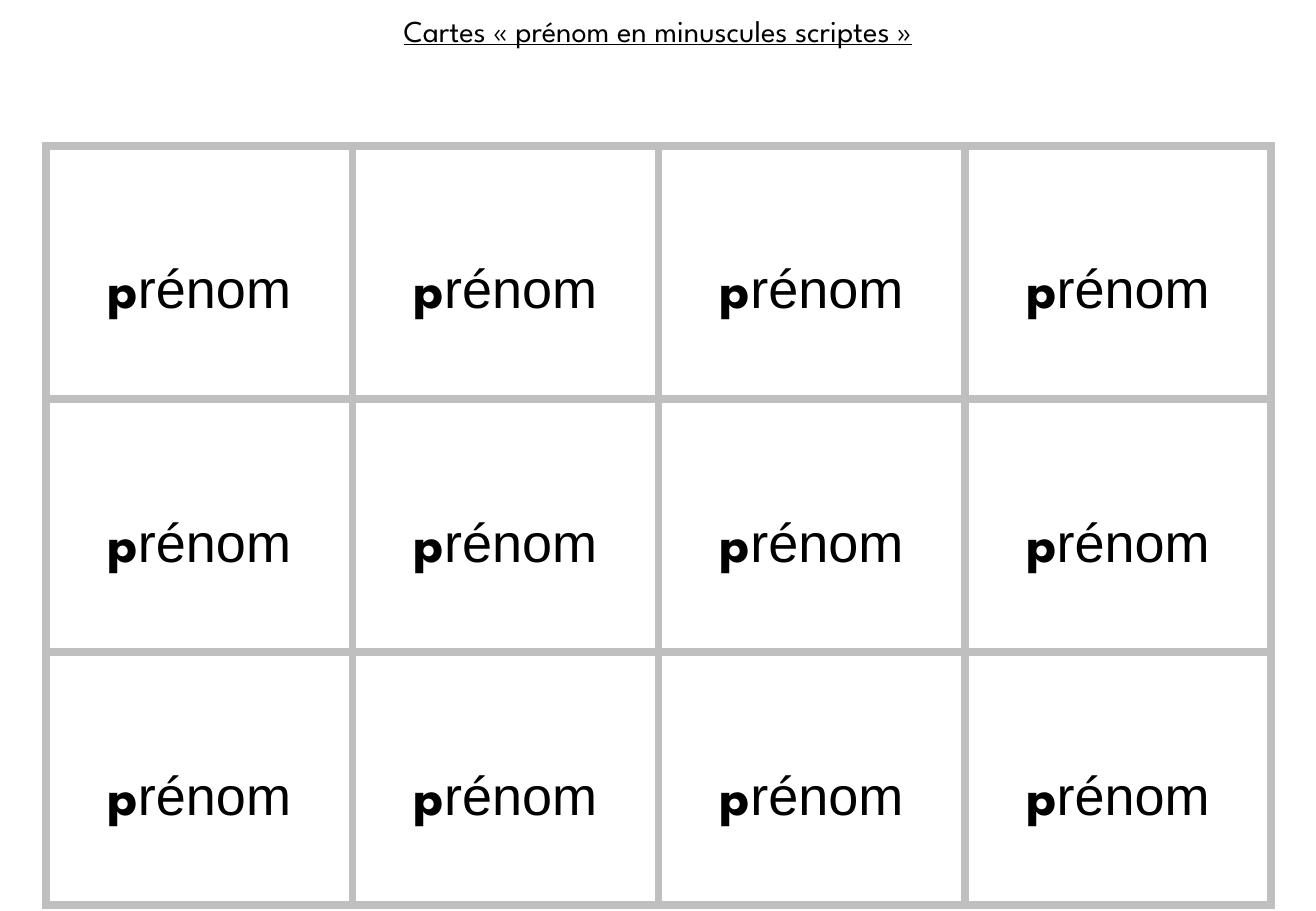
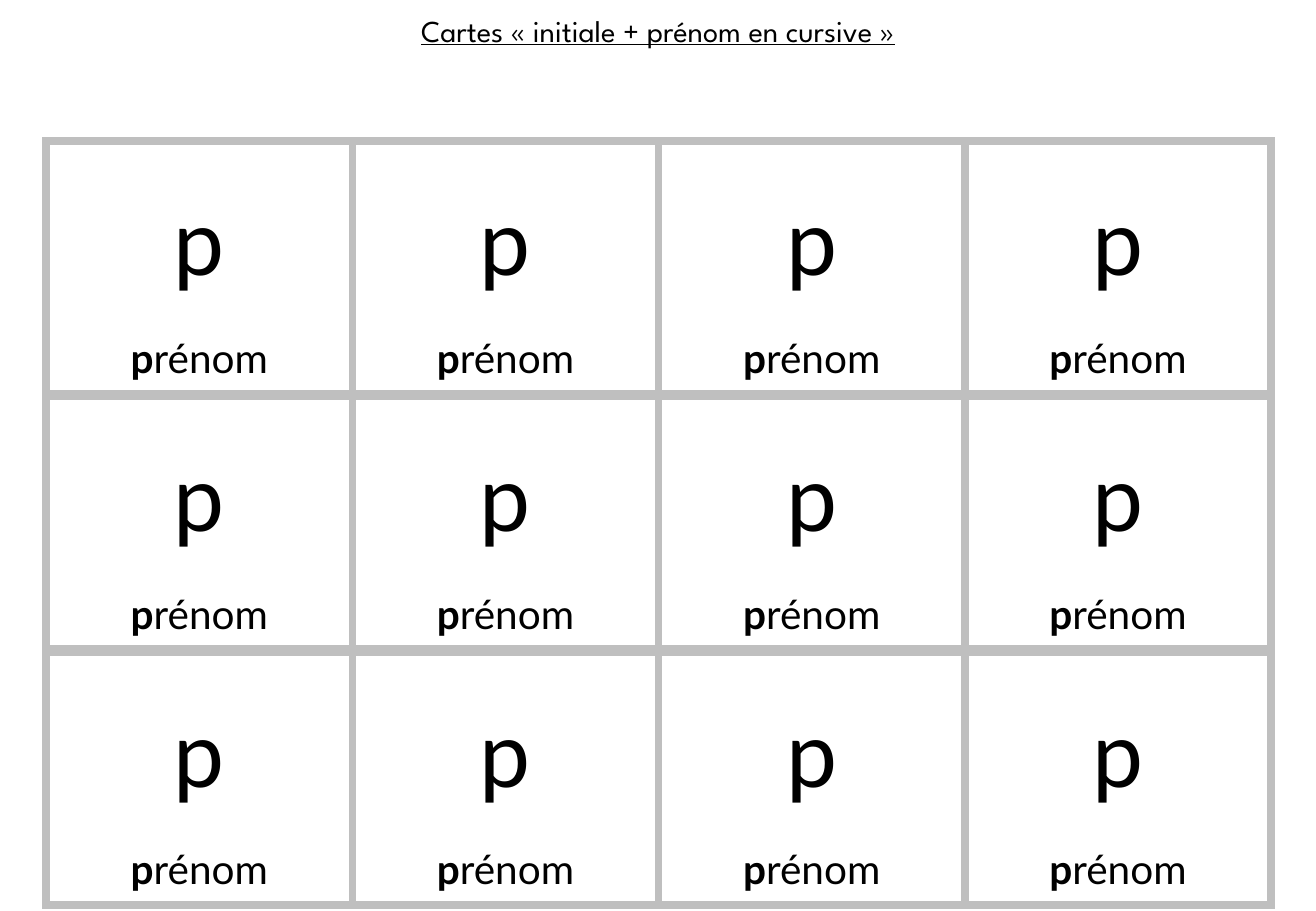
from dataclasses import dataclass
from itertools import product

from lxml.etree import SubElement
from pptx import Presentation
from pptx.dml.color import RGBColor
from pptx.enum.shapes import MSO_SHAPE
from pptx.enum.text import MSO_AUTO_SIZE, PP_ALIGN
from pptx.oxml.ns import qn
from pptx.util import Inches, Pt


@dataclass(frozen=True)
class Theme:
    ink: RGBColor = RGBColor(0, 0, 0)
    frame: RGBColor = RGBColor(0xBF, 0xBF, 0xBF)
    frame_width: float = 4.5
    display: str = "League Spartan"
    script: str = "Arial"
    cursive: str = "Lato"
    title_size: int = 18
    small_name_size: int = 24
    name_size: int = 32
    initial_size: int = 54


def write(paragraph, text, *, font, size, color, bold=False, underline=False):
    run = paragraph.add_run()
    run.text = text
    run.font.name = font
    run.font.size = Pt(size)
    run.font.color.rgb = color
    run.font.bold = bold
    run.font.underline = underline


class CardSheet:
    WIDTH, HEIGHT = 10.83, 7.5
    COLUMNS, ROWS = 4, 3
    CARD_WIDTH, CARD_HEIGHT = 2.52, 2.08
    LEFT, LAST_ROW = 0.38, 5.37

    def __init__(self, theme):
        self.theme = theme
        self.deck = Presentation()
        self.deck.slide_width = Inches(self.WIDTH)
        self.deck.slide_height = Inches(self.HEIGHT)
        self.slide = None
        self.pitch = self.top = 0

    def start(self, title, top):
        self.slide = self.deck.slides.add_slide(self.deck.slide_layouts[6])
        self.top = top
        self.pitch = (self.LAST_ROW - top) / (self.ROWS - 1)
        theme = self.theme
        self.text_box(0, 0.05, self.WIDTH, 0.4, [(title, theme.display)],
                      size=theme.title_size, underline=True)

    def cells(self):
        return product(range(self.ROWS), range(self.COLUMNS))

    def corner(self, row, column):
        return self.LEFT + column * self.CARD_WIDTH, self.top + row * self.pitch

    def text_box(self, left, top, width, height, parts, spacing=None, bold_first=False, **style):
        box = self.slide.shapes.add_textbox(*map(Inches, (left, top, width, height)))
        frame = box.text_frame
        frame.word_wrap = True
        frame.auto_size = MSO_AUTO_SIZE.SHAPE_TO_FIT_TEXT
        line = frame.paragraphs[0]
        line.alignment = PP_ALIGN.CENTER
        line.line_spacing = spacing
        for index, (text, font) in enumerate(parts):
            write(line, text, font=font, color=self.theme.ink,
                  bold=bold_first and index == 0, **style)

    def card_frame(self, cell):
        border = self.slide.shapes.add_shape(
            MSO_SHAPE.RECTANGLE,
            *map(Inches, (*self.corner(*cell), self.CARD_WIDTH, self.CARD_HEIGHT)))
        border.shadow.inherit = False
        border.fill.background()
        border.line.color.rgb = self.theme.frame
        border.line.width = Pt(self.theme.frame_width)
        outline = border._element.spPr.get_or_add_ln()
        SubElement(outline, qn("a:miter")).set("lim", "800000")

    def card_text(self, cell, parts, down, height, width=1, **style):
        left, top = self.corner(*cell)
        self.text_box(left + (1 - width) / 2 * self.CARD_WIDTH,
                      top + down * self.CARD_HEIGHT,
                      width * self.CARD_WIDTH, height * self.CARD_HEIGHT, parts, **style)

    def first_name(self, cell, initial_font, rest_font, **style):
        self.card_text(cell, [("p", initial_font), ("rénom", rest_font)],
                       spacing=1.5, bold_first=True, **style)

    def initial(self, cell):
        self.card_text(cell, [("p", self.theme.cursive)], down=0.15, height=0.49,
                       width=0.47, size=self.theme.initial_size)


def main():
    theme = Theme()
    sheet = CardSheet(theme)

    sheet.start("Cartes « prénom en minuscules scriptes »", top=1.2)
    for cell in sheet.cells():
        sheet.card_frame(cell)
        sheet.first_name(cell, theme.display, theme.script, down=0.28, height=0.44,
                         size=theme.name_size)

    sheet.start("Cartes « initiale + prénom en cursive »", top=1.16)
    for cell in sheet.cells():
        sheet.card_frame(cell)
        sheet.initial(cell)
        sheet.first_name(cell, theme.cursive, theme.cursive, down=0.64, height=0.32,
                         size=theme.small_name_size)

    sheet.deck.save("out.pptx")


if __name__ == "__main__":
    main()
